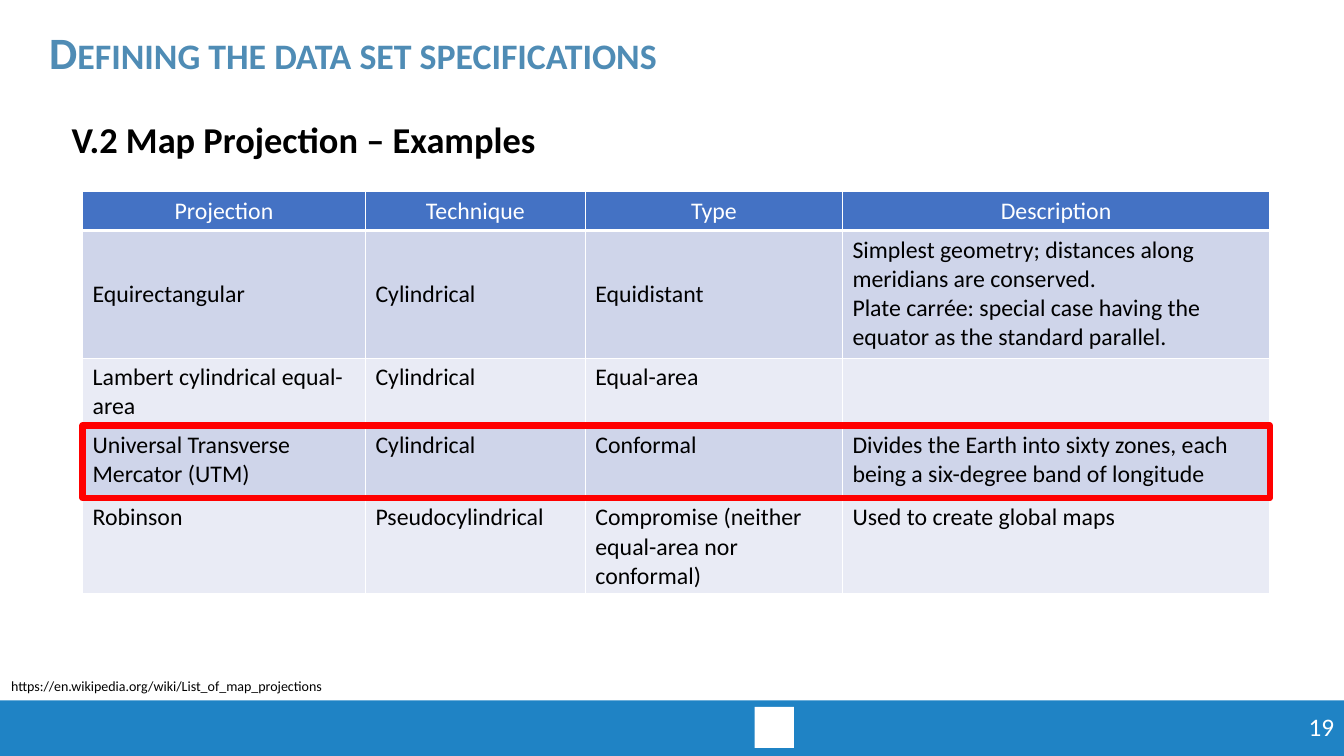
from lxml import etree
from pptx import Presentation, util as u
from pptx.dml.color import RGBColor
from pptx.enum import shapes, text
from pptx.oxml import ns

COLORS = {
    "band": "1F83C5", "heading": "4F8CB5", "header": "4472C4", "odd": "CFD5EA",
    "even": "E9EBF5", "highlight": "FF0000", "white": "FFFFFF", "black": "000000",
}


def color(name):
    return RGBColor.from_string(COLORS[name])


def write(frame, wording, align, anchor, **font):
    """Fill a text frame with one paragraph and apply the font values."""
    frame.word_wrap = True
    frame.vertical_anchor = anchor
    paragraph = frame.paragraphs[0]
    paragraph.text = wording
    paragraph.alignment = align
    for run in paragraph.runs:
        run.font.name = "Calibri"
        run.font.color.rgb = color(font["ink"])
        for key in ("size", "bold"):
            if key in font:
                setattr(run.font, key, font[key])
    return paragraph


LEFT, CENTER, RIGHT = text.PP_ALIGN.LEFT, text.PP_ALIGN.CENTER, text.PP_ALIGN.RIGHT
TOP, MIDDLE = text.MSO_ANCHOR.TOP, text.MSO_ANCHOR.MIDDLE

deck = Presentation()
deck.slide_width, deck.slide_height = u.Cm(33.87), u.Cm(19.05)
slide = deck.slides.add_slide(deck.slide_layouts[1])

# Footer band with a plain square in the emblem's place
for fill, box in (("band", (0, 17.65, 33.87, 1.4)), ("white", (19.02, 17.81, 0.99, 1.04))):
    footer = slide.shapes.add_shape(shapes.MSO_SHAPE.RECTANGLE, *map(u.Cm, box))
    footer.shadow.inherit = False
    footer.fill.solid()
    footer.fill.fore_color.rgb = color(fill)
    footer.line.fill.background()

# Title and section heading
heading, section = slide.shapes.title, slide.placeholders[1]
headings = (
    (heading, "Defining the data set specifications", 32, "heading",
     {"left": 0, "top": 0.43, "width": 33.87, "height": 1.93}),
    (section, "V.2 Map Projection – Examples", 26, "black",
     {"left": 1.55, "top": 2.92, "width": 22.45, "height": 1.3}),
)
for holder, wording, size, ink, place in headings:
    for key, value in place.items():
        setattr(holder, key, u.Cm(value))
    holder.text_frame.auto_size = text.MSO_AUTO_SIZE.NONE
    line = write(holder.text_frame, wording, LEFT, MIDDLE, size=u.Pt(size), bold=True, ink=ink)
    line.line_spacing = 0.9
    line.space_before = u.Pt(0)
heading.text_frame.margin_left = u.Cm(1.24)
heading.text_frame.paragraphs[0].runs[0].font._element.set("cap", "small")
section_format = section.text_frame.paragraphs[0]._p.get_or_add_pPr()
for key in ("marL", "indent"):
    section_format.set(key, "0")
etree.SubElement(section_format, ns.qn("a:buNone"))

# Source address and page number
notes = (
    ("https://en.wikipedia.org/wiki/List_of_map_projections", (0.03, 16.94, 20.07, 0.69), LEFT, 10, "black"),
    ("19", (31.95, 17.81, 1.92, 1.02), RIGHT, 18, "white"),
)
for wording, box, align, size, ink in notes:
    note = slide.shapes.add_textbox(*map(u.Cm, box))
    write(note.text_frame, wording, align, TOP, size=u.Pt(size), ink=ink)

# Projection table
projections = (
    ("Projection", "Technique", "Type", "Description"),
    ("Equirectangular", "Cylindrical", "Equidistant",
     "Simplest geometry; distances along meridians are conserved.\v"
     "Plate carrée: special case having the equator as the standard parallel."),
    ("Lambert cylindrical equal-area", "Cylindrical", "Equal-area", ""),
    ("Universal Transverse Mercator (UTM)", "Cylindrical", "Conformal",
     "Divides the Earth into sixty zones, each being a six-degree band of longitude"),
    ("Robinson", "Pseudocylindrical", "Compromise (neither equal-area nor conformal)",
     "Used to create global maps"),
)
widths = (7.13, 5.54, 6.48, 10.77)
heights = (0.97, 3.22, 1.7, 1.83, 2.41)
table_left, table_top = 2.08, 4.83
table = slide.shapes.add_table(
    len(heights), len(widths), u.Cm(table_left), u.Cm(table_top),
    u.Cm(sum(widths)), u.Cm(sum(heights))).table
for column, width in zip(table.columns, widths):
    column.width = u.Cm(width)
for r, (entries, height) in enumerate(zip(projections, heights)):
    table.rows[r].height = u.Cm(height)
    for c, entry in enumerate(entries):
        cell = table.cell(r, c)
        write(cell.text_frame, entry, LEFT if r else CENTER, TOP,
              size=u.Pt(17), bold=False, ink="black" if r else "white")
        cell.vertical_anchor = MIDDLE if r == 1 and c < 3 else TOP
        if not entry:
            cell.text_frame.paragraphs[0].font.size = u.Pt(17)
        # White grid, heavier between header and body
        borders = {"L": 1, "R": 1, "T": 3 if r == 1 else 1, "B": 1 if r else 3}
        for side, weight in borders.items():
            border = etree.SubElement(cell._tc.get_or_add_tcPr(), ns.qn(f"a:ln{side}"), w=str(u.Pt(weight)))
            paint = etree.SubElement(border, ns.qn("a:solidFill"))
            etree.SubElement(paint, ns.qn("a:srgbClr"), val=COLORS["white"])
        cell.fill.solid()
        cell.fill.fore_color.rgb = color(("odd" if r % 2 else "even") if r else "header")

# Frame around the UTM row
utm_frame = slide.shapes.add_shape(
    shapes.MSO_SHAPE.RECTANGLE, u.Cm(table_left), u.Cm(table_top + sum(heights[:3])),
    u.Cm(sum(widths)), u.Cm(heights[3]))
utm_frame.shadow.inherit = False
utm_frame.fill.background()
utm_frame.line.color.rgb = color("highlight")
utm_frame.line.width = u.Pt(4.5)

deck.save("out.pptx")
